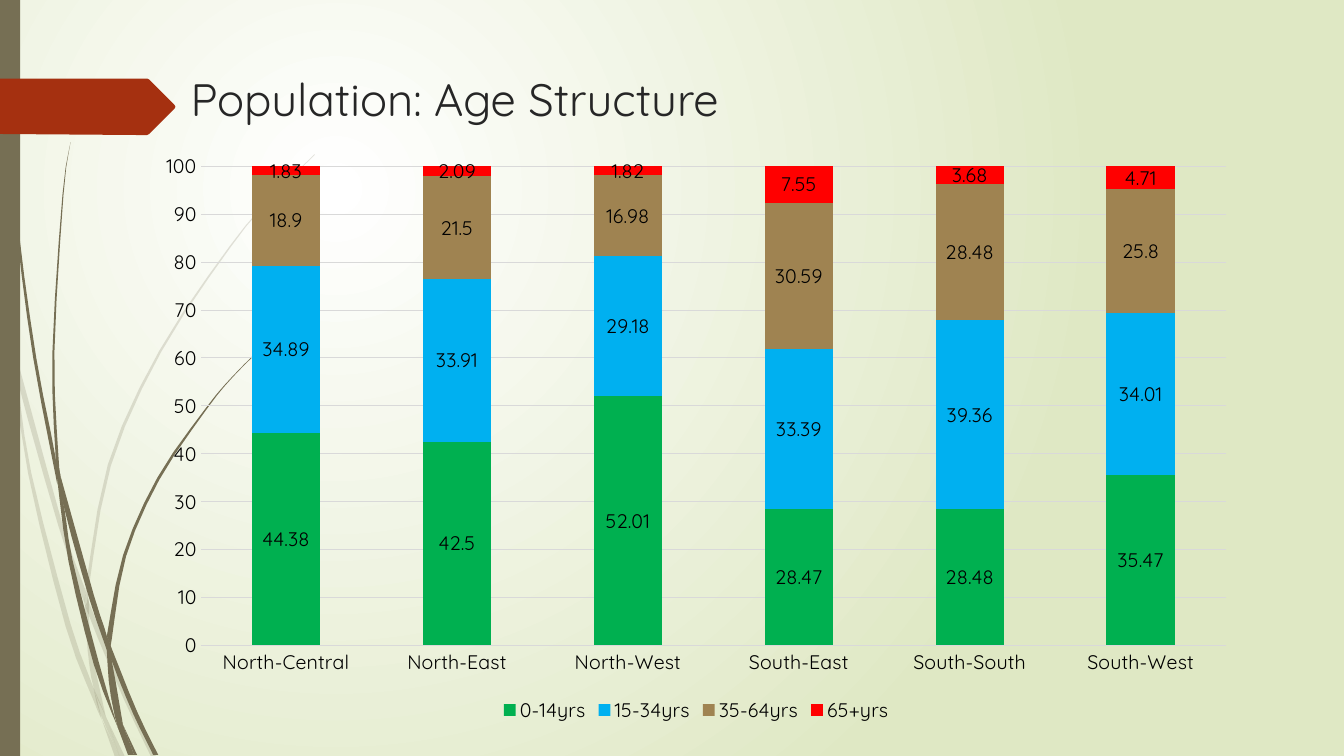
from pptx import Presentation
from pptx.chart.data import CategoryChartData
from pptx.dml.color import RGBColor
from pptx.enum import chart as ch, shapes, text
from pptx.oxml import parse_xml
from pptx.oxml.ns import nsdecls, qn
from pptx.util import Inches, Pt
from lxml import etree

FONT = "Quicksand"
BLACK = RGBColor(0x00, 0x00, 0x00)
TITLE_GREY = RGBColor(0x26, 0x26, 0x26)
GRID_GREY = RGBColor(0xD9, 0xD9, 0xD9)
STEM_BROWN = RGBColor(0x76, 0x6F, 0x54)
ARROW_RED = RGBColor(0xA5, 0x30, 0x10)
GREEN = RGBColor(0x00, 0xB0, 0x50)
BLUE = RGBColor(0x00, 0xB0, 0xF0)
TAN = RGBColor(0x9F, 0x83, 0x51)
RED = RGBColor(0xFF, 0x00, 0x00)

# Content
TITLE = "Population: Age Structure"
REGIONS = ["North-Central", "North-East", "North-West",
           "South-East", "South-South", "South-West"]
AGE_GROUPS = [
    ("0-14yrs", GREEN, (44.38, 42.5, 52.01, 28.47, 28.48, 35.47)),
    ("15-34yrs", BLUE, (34.89, 33.91, 29.18, 33.39, 39.36, 34.01)),
    ("35-64yrs", TAN, (18.9, 21.5, 16.98, 30.59, 28.48, 25.8)),
    ("65+yrs", RED, (1.83, 2.09, 1.82, 7.55, 3.68, 4.71)),
]

# Grass blades: left edge and right edge, top to bottom, in inches
PALE_BLADES = [
    ([(0, 2.82), (0, 2.99), (0.1, 3.44), (0.11, 3.5)], [(0, 2.82), (0.09, 3.22), (0.11, 3.5)]),
    ([(0.14, 3.45), (0.17, 3.76), (0.58, 5.22), (0.84, 5.99)],
     [(0.14, 3.45), (0.62, 5.2), (0.85, 5.86)]),
    ([(0.88, 5.96), (0.88, 6.1), (1.23, 6.94), (1.5, 7.51)],
     [(0.88, 5.96), (0.92, 6.07), (1.27, 6.92), (1.55, 7.51)]),
    ([(1.05, 7.11), (1.19, 7.51)], [(1.05, 7.11), (1.24, 7.51)]),
    ([(0.11, 3.5), (0.28, 4.7), (0.65, 6.21), (0.92, 6.93), (1.01, 7.14)],
     [(0.11, 3.5), (0.17, 3.76), (0.31, 4.69), (0.7, 6.19), (0.93, 6.83), (1.01, 7.14)]),
    ([(0.84, 5.99), (0.87, 6.46), (0.93, 6.83), (1.05, 7.11)],
     [(0.84, 5.99), (0.88, 6.1), (0.91, 6.46), (1.05, 7.11)]),
    ([(3.12, 1.53), (2.68, 1.97), (2.28, 2.44), (1.58, 3.48), (1.07, 4.61), (0.85, 5.84)],
     [(3.12, 1.54), (2.68, 1.98), (2.29, 2.45), (1.6, 3.49), (1.1, 4.62), (0.88, 5.84),
      (0.88, 5.96)]),
    ([(1.01, 7.14), (1.14, 7.51)], [(1.01, 7.14), (1.19, 7.51)]),
    ([(0.85, 5.86), (0.84, 5.99), (0.88, 6.1)], [(0.85, 5.86), (0.88, 5.96), (0.88, 6.1)]),
    ([(0.93, 6.83), (0.99, 7.07), (1.19, 7.51)], [(0.93, 6.83), (1.05, 7.11), (1.19, 7.51)]),
]
DARK_BLADES = [
    ([(0.03, 0), (0.07, 1.1), (0.17, 2.33), (0.33, 3.55), (0.57, 4.81)],
     [(0.04, 0), (0.08, 1.09), (0.19, 2.32), (0.36, 3.55), (0.55, 4.53), (0.57, 4.81)]),
    ([(0.6, 4.72), (0.64, 5.05), (0.88, 5.92), (1.06, 6.45)],
     [(0.6, 4.72), (0.93, 5.9), (1.06, 6.31), (1.06, 6.45)]),
    ([(1.1, 6.41), (1.11, 6.56), (1.32, 7.08), (1.52, 7.49)],
     [(1.1, 6.41), (1.13, 6.49), (1.36, 7.06), (1.57, 7.49)]),
    ([(0.57, 4.77), (0.68, 5.57), (0.93, 6.59), (1.17, 7.22)],
     [(0.57, 4.77), (0.64, 5.05), (0.72, 5.56), (0.98, 6.57), (1.17, 7.22)]),
    ([(0.7, 1.41), (0.62, 1.93), (0.52, 3.49), (0.55, 4.49), (0.6, 4.72)],
     [(0.7, 1.41), (0.63, 1.93), (0.54, 3.49), (0.58, 4.53), (0.6, 4.72)]),
    ([(1.22, 7.19), (1.33, 7.49)], [(1.22, 7.19), (1.36, 7.49)]),
    ([(0.55, 4.49), (0.57, 4.77), (0.64, 5.05)], [(0.55, 4.49), (0.6, 4.72), (0.64, 5.05)]),
    ([(2.6, 3.44), (2.31, 3.73), (2.04, 4.05), (1.56, 4.74), (1.22, 5.51), (1.06, 6.31)],
     [(2.61, 3.44), (2.31, 3.74), (2.05, 4.06), (1.58, 4.76), (1.25, 5.52), (1.11, 6.33),
      (1.1, 6.41)]),
    ([(1.17, 7.22), (1.27, 7.49)], [(1.17, 7.22), (1.31, 7.49)]),
    ([(1.06, 6.45), (1.1, 6.91), (1.22, 7.19)], [(1.06, 6.45), (1.11, 6.56), (1.22, 7.19)]),
    ([(1.06, 6.31), (1.06, 6.45), (1.11, 6.56)], [(1.06, 6.31), (1.1, 6.41), (1.11, 6.56)]),
    ([(1.1, 6.91), (1.17, 7.22), (1.3, 7.49)], [(1.1, 6.91), (1.22, 7.19), (1.33, 7.49)]),
]
ARROW = [(0, 0.78), (1.46, 0.78), (1.48, 0.79), (1.73, 1.04), (1.74, 1.06),
         (1.73, 1.08), (1.48, 1.33), (1.46, 1.34), (1.36, 1.34), (0, 1.33)]
CURVE_STEPS = 3
UNITS_PER_INCH = 1000

BACKGROUND = f"""<p:bg {nsdecls('p', 'a')}><p:bgPr><a:gradFill rotWithShape="1"><a:gsLst>
<a:gs pos="0"><a:srgbClr val="FFFFFF"/></a:gs>
<a:gs pos="100000"><a:srgbClr val="DFE8C4"/></a:gs></a:gsLst>
<a:path path="circle"><a:fillToRect l="50000" t="50000" r="100000" b="100000"/></a:path>
</a:gradFill><a:effectLst/></p:bgPr></p:bg>"""


def smooth(points):
    """Catmull-Rom curve through the points."""
    if len(points) == 2:
        return points
    padded = [points[0], *points, points[-1]]
    curve = []
    for a, b, c, d in zip(padded, padded[1:], padded[2:], padded[3:]):
        for t in (step / CURVE_STEPS for step in range(CURVE_STEPS)):
            curve.append(tuple(
                (2 * q + (r - p) * t + (2 * p - 5 * q + 4 * r - s) * t ** 2
                 + (3 * q - p - 3 * r + s) * t ** 3) / 2
                for p, q, r, s in zip(a, b, c, d)))
    return curve + [points[-1]]


def paint(shape, color, opacity=100):
    shape.shadow.inherit = False
    shape.fill.solid()
    shape.fill.fore_color.rgb = color
    shape.line.fill.background()
    if opacity < 100:
        swatch = shape.element.spPr.find(f"{qn('a:solidFill')}/{qn('a:srgbClr')}")
        etree.SubElement(swatch, qn("a:alpha")).set("val", str(opacity * 1000))


def add_outline(slide, points, color, opacity=100):
    start, *rest = [(x * UNITS_PER_INCH, y * UNITS_PER_INCH) for x, y in points]
    builder = slide.shapes.build_freeform(*start, scale=Inches(1) / UNITS_PER_INCH)
    builder.add_line_segments(rest, close=True)
    paint(builder.convert_to_shape(), color, opacity)


def style_font(font, size=14, color=BLACK):
    font.name, font.size = FONT, Pt(size)
    font.color.rgb = color


def add_age_chart(slide):
    data = CategoryChartData()
    data.categories = REGIONS
    for name, _, values in AGE_GROUPS:
        data.add_series(name, values)
    chart = slide.shapes.add_chart(
        ch.XL_CHART_TYPE.COLUMN_STACKED, Inches(1.43), Inches(1.41),
        Inches(10.95), Inches(5.8), data).chart
    style_font(chart.font)
    chart.has_title = False
    chart.has_legend = True
    chart.legend.position = ch.XL_LEGEND_POSITION.BOTTOM
    chart.legend.include_in_layout = False
    style_font(chart.legend.font)
    # Axes
    for axis in (chart.category_axis, chart.value_axis):
        axis.major_tick_mark = axis.minor_tick_mark = ch.XL_TICK_MARK.NONE
        style_font(axis.tick_labels.font)
    scale = chart.value_axis
    scale.minimum_scale, scale.maximum_scale, scale.major_unit = 0, 100, 10
    scale.format.line.fill.background()
    for line in (chart.category_axis.format.line, scale.major_gridlines.format.line):
        line.color.rgb = GRID_GREY
        line.width = Pt(0.75)
    # Columns
    plot = chart.plots[0]
    plot.gap_width, plot.overlap = 150, 100
    plot.vary_by_categories = False
    for series, (_, color, _) in zip(plot.series, AGE_GROUPS):
        series.format.fill.solid()
        series.format.fill.fore_color.rgb = color
        labels = series.data_labels
        labels.show_value = True
        labels.position = ch.XL_LABEL_POSITION.CENTER
        style_font(labels.font)


def main():
    presentation = Presentation()
    presentation.slide_width, presentation.slide_height = Inches(13.33), Inches(7.5)
    slide = presentation.slides.add_slide(presentation.slide_layouts[5])
    slide.element.cSld.insert(0, parse_xml(BACKGROUND))
    # Decoration
    for opacity, blades in ((20, PALE_BLADES), (100, DARK_BLADES)):
        for left, right in blades:
            add_outline(slide, smooth(left) + smooth(right)[::-1], STEM_BROWN, opacity)
    paint(slide.shapes.add_shape(shapes.MSO_SHAPE.RECTANGLE, 0, 0, Inches(0.2), Inches(7.5)),
          STEM_BROWN)
    add_outline(slide, ARROW, ARROW_RED)
    # Title
    title = slide.shapes.title
    title.left, title.top = Inches(1.79), Inches(0.66)
    title.width, title.height = Inches(9.75), Inches(0.64)
    frame = title.text_frame
    frame.text = TITLE
    frame.auto_size = text.MSO_AUTO_SIZE.NONE
    frame.vertical_anchor = text.MSO_ANCHOR.MIDDLE
    paragraph = frame.paragraphs[0]
    paragraph.alignment = text.PP_ALIGN.LEFT
    style_font(paragraph.font, 32.4, TITLE_GREY)
    add_age_chart(slide)
    presentation.save("out.pptx")


if __name__ == "__main__":
    main()
